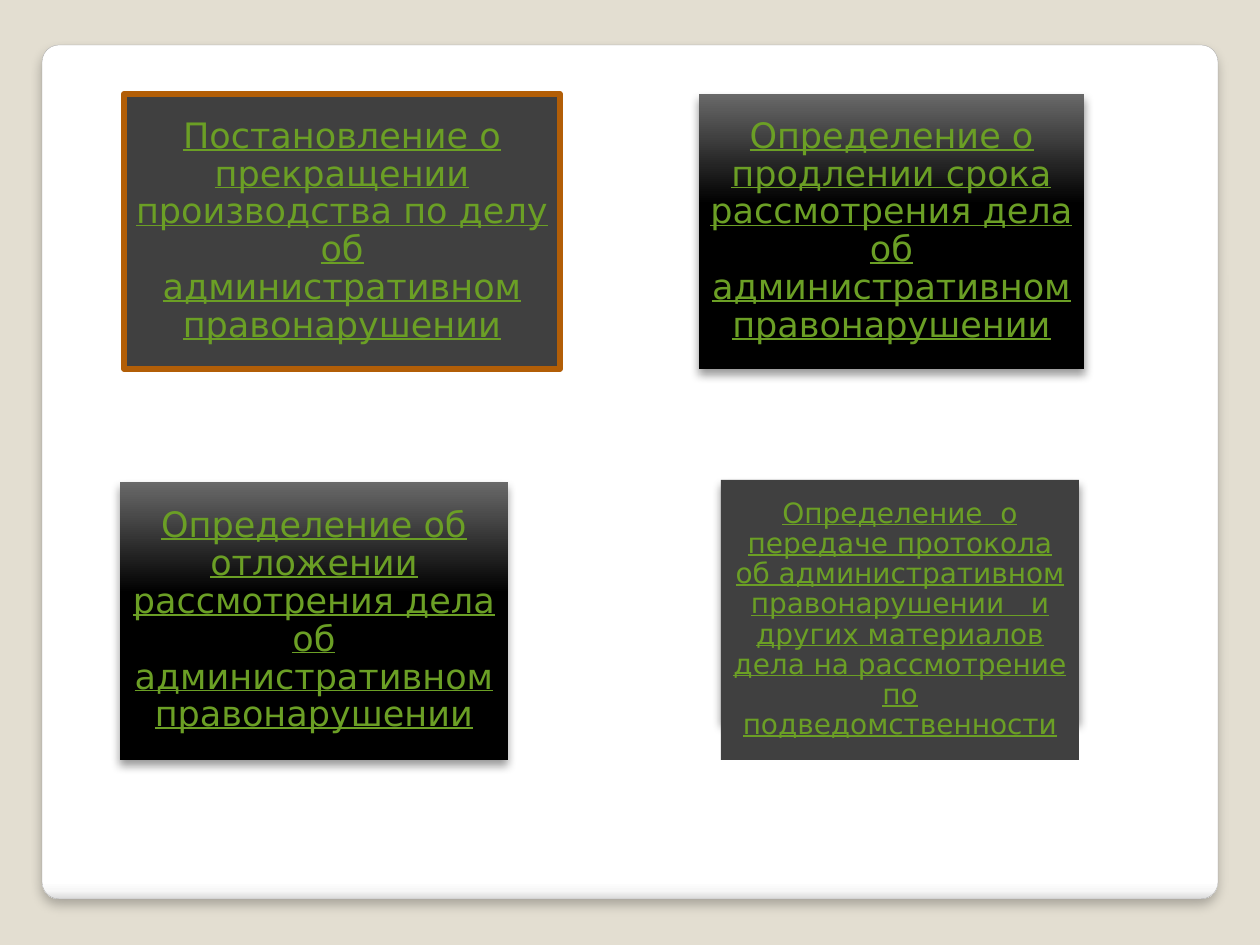
import pptx
import pptx.dml.color
import pptx.enum.shapes
import pptx.enum.text
import pptx.oxml
import pptx.oxml.ns
import pptx.util

PX = 914400 / 126
COLORS = {
    "background": "E3DED1", "panel": "FFFFFF", "panel_shade": "F7F7F7",
    "panel_edge": "DADADA", "panel_line": "A4A4A4", "card": "404040",
    "accent": "B25E07", "link": "6B9F25", "black": "000000", "gray": "696969",
}
PANEL_GRADIENT = [(0, "panel"), (98, "panel"), (99, "panel_shade"), (100, "panel_edge")]
CARD_GRADIENT = [(0, "black"), (60, "black"), (100, "gray")]
CARD_SHADOW = {"opacity": 40, "blur": 5.2, "distance": 3}


def px(length):
    return pptx.util.Emu(round(length * PX))


def color(name):
    return pptx.dml.color.RGBColor.from_string(COLORS[name])


def set_gradient(shape, stops, angle):
    stop_xml = "".join(
        f'<a:gs pos="{position * 1000}"><a:srgbClr val="{COLORS[name]}"/></a:gs>'
        for position, name in stops
    )
    gradient = pptx.oxml.parse_xml(
        f'<a:gradFill {pptx.oxml.ns.nsdecls("a")} rotWithShape="1">'
        f'<a:gsLst>{stop_xml}</a:gsLst><a:lin ang="{angle * 60000}" scaled="0"/></a:gradFill>'
    )
    shape.element.spPr.find(pptx.oxml.ns.qn("a:prstGeom")).addnext(gradient)


def set_shadow(shape, opacity, blur, distance):
    effects = shape.element.spPr.find(pptx.oxml.ns.qn("a:effectLst"))
    effects.append(pptx.oxml.parse_xml(
        f'<a:outerShdw {pptx.oxml.ns.nsdecls("a")} blurRad="{pptx.util.Pt(blur)}" '
        f'dist="{pptx.util.Pt(distance)}" dir="5400000" algn="t" rotWithShape="0">'
        f'<a:srgbClr val="{COLORS["black"]}"><a:alpha val="{opacity * 1000}"/></a:srgbClr>'
        f'</a:outerShdw>'
    ))


def add_box(slide, box, kind="RECTANGLE", fill=None, gradient=None, angle=270,
            line=None, line_width=1, shadow=None):
    shape = slide.shapes.add_shape(
        getattr(pptx.enum.shapes.MSO_SHAPE, kind), *(px(length) for length in box))
    shape.shadow.inherit = False
    if line:
        shape.line.color.rgb = color(line)
        shape.line.width = pptx.util.Pt(line_width)
    else:
        shape.line.fill.background()
    if gradient:
        set_gradient(shape, gradient, angle)
    else:
        shape.fill.solid()
        shape.fill.fore_color.rgb = color(fill)
    if shadow:
        set_shadow(shape, **shadow)
    return shape


def add_link_text(shape, text, size=20, inset=10):
    frame = shape.text_frame
    frame.word_wrap = True
    frame.vertical_anchor = pptx.enum.text.MSO_ANCHOR.MIDDLE
    frame.margin_left = frame.margin_right = px(inset)
    frame.margin_top = frame.margin_bottom = px(inset)
    paragraph = frame.paragraphs[0]
    paragraph.alignment = pptx.enum.text.PP_ALIGN.CENTER
    paragraph.line_spacing = 0.9
    run = paragraph.add_run()
    run.text = text
    run.font.name = "DejaVu Sans"
    run.font.size = pptx.util.Pt(size)
    run.font.underline = True
    run.font.color.rgb = color("link")


def add_panel(slide, box):
    panel = add_box(slide, box, kind="ROUNDED_RECTANGLE", gradient=PANEL_GRADIENT,
                    angle=90, line="panel_line", line_width=0.16,
                    shadow={"opacity": 25, "blur": 6, "distance": 4})
    panel.adjustments[0] = 0.02


def add_outlined_card(slide, box, text):
    card = add_box(slide, box, fill="card", line="accent", line_width=3.35)
    add_link_text(card, text, inset=12)


def add_gradient_card(slide, box, text):
    card = add_box(slide, box, gradient=CARD_GRADIENT, shadow=CARD_SHADOW)
    add_link_text(card, text)


def add_layered_card(slide, box, text):
    left, top, width, height = box
    add_box(slide, (left, top, width, height - 39),
            gradient=CARD_GRADIENT, shadow=CARD_SHADOW)
    card = add_box(slide, box, fill="card")
    add_link_text(card, text, size=16, inset=8)


def main():
    presentation = pptx.Presentation()
    presentation.slide_width = px(1260)
    presentation.slide_height = px(945)
    slide = presentation.slides.add_slide(presentation.slide_layouts[6])
    slide.background.fill.solid()
    slide.background.fill.fore_color.rgb = color("background")

    add_panel(slide, (42, 45, 1176, 854))
    add_outlined_card(
        slide, (124, 94, 436, 275),
        "Постановление о прекращении производства по делу об административном правонарушении")
    add_gradient_card(
        slide, (699, 94, 385, 275),
        "Определение о продлении срока рассмотрения дела об административном правонарушении")
    add_gradient_card(
        slide, (120, 482, 388, 278),
        "Определение об отложении рассмотрения дела об административном правонарушении")
    add_layered_card(
        slide, (721, 480, 358, 280),
        "Определение  о передаче протокола об административном правонарушении   и других "
        "материалов дела на рассмотрение по подведомственности")
    presentation.save("out.pptx")


if __name__ == "__main__":
    main()
